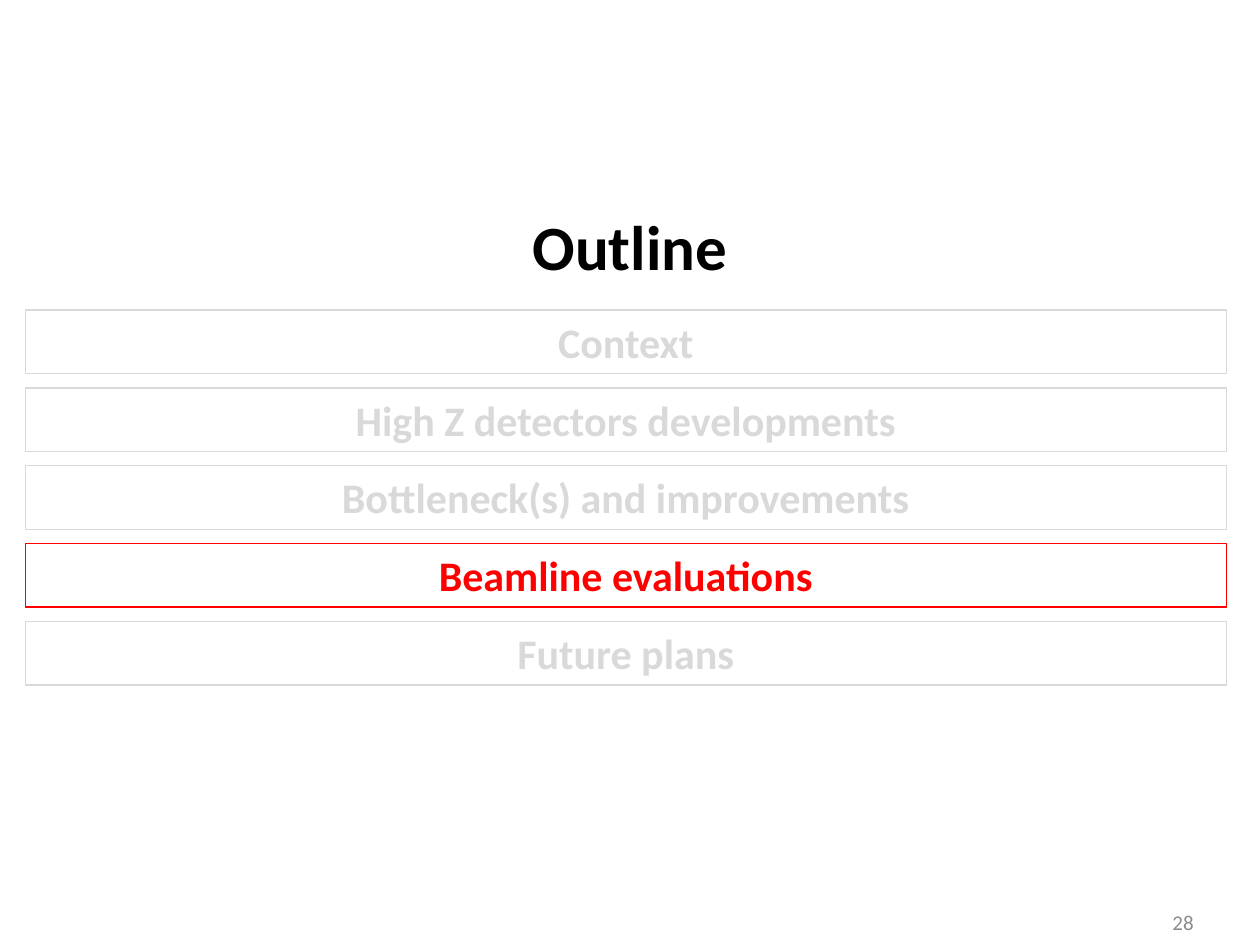
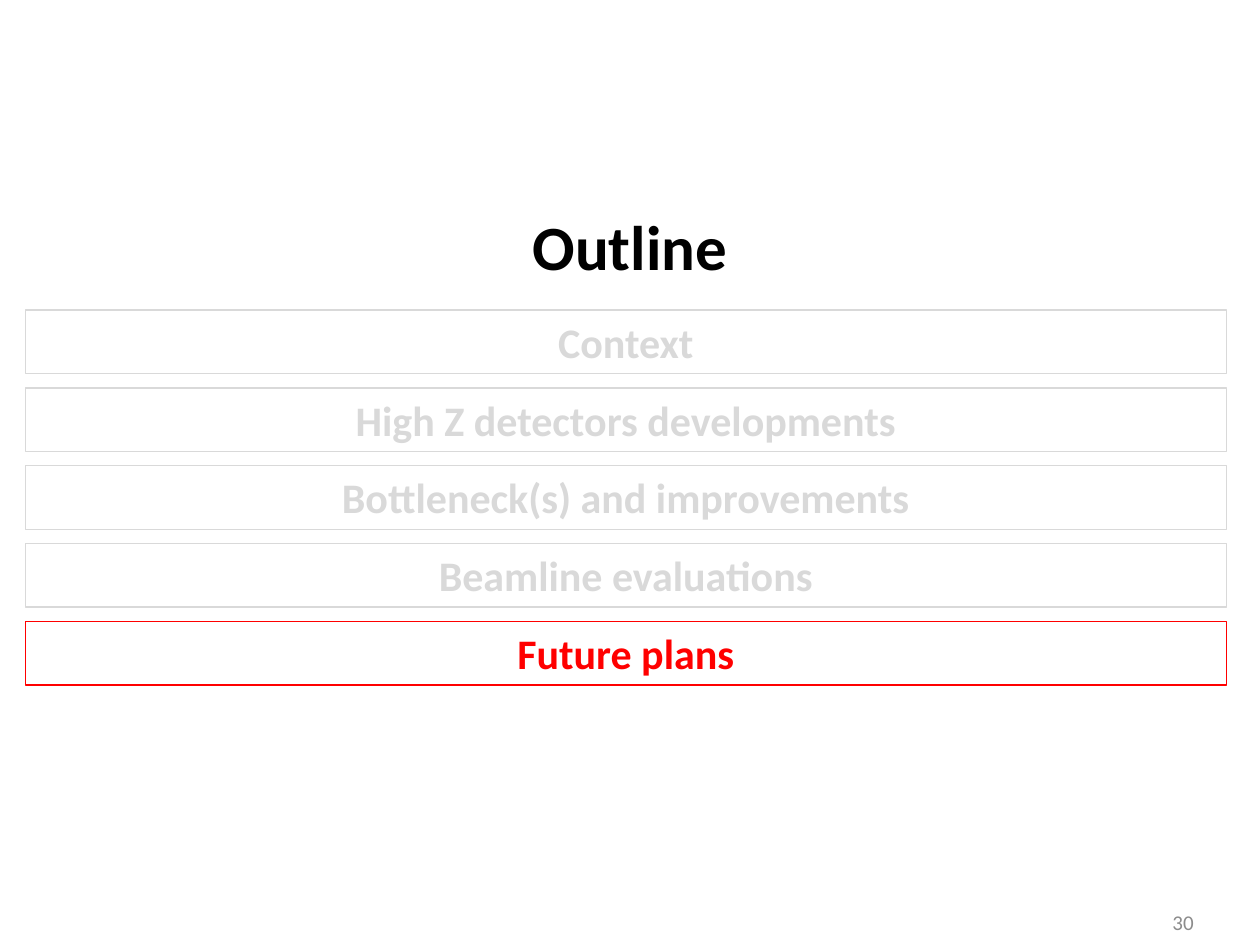
from dataclasses import dataclass

from pptx import Presentation
from pptx.dml.color import RGBColor
from pptx.enum.shapes import MSO_SHAPE
from pptx.enum.text import MSO_ANCHOR, MSO_AUTO_SIZE, PP_ALIGN
from pptx.util import Cm, Pt


@dataclass(frozen=True)
class Theme:
    font: str = "Calibri"
    title_color: str = "000000"
    muted: str = "D9D9D9"
    active: str = "FF0000"
    number_color: str = "8C8C8C"
    title_size: int = 36
    topic_size: int = 24
    number_size: int = 12
    line_width: float = 0.75


TOPICS = [
    "Context",
    "High Z detectors developments",
    "Bottleneck(s) and improvements",
    "Beamline evaluations",
    "Future plans",
]

# Page number and the topic highlighted on that page
PAGES = [(28, "Beamline evaluations"), (30, "Future plans")]

# Topic bars, in cm
BAR_LEFT, BAR_TOP, BAR_WIDTH, BAR_HEIGHT = 0.51, 6.25, 24.21, 1.28
BAR_PITCH = 1.57


class Deck:
    def __init__(self, theme):
        self.theme = theme
        self.prs = Presentation()
        self.prs.slide_width, self.prs.slide_height = Cm(25.4), Cm(19.05)
        self.s = None

    def new_slide(self):
        title_only = self.prs.slide_layouts[5]
        self.s = self.prs.slides.add_slide(title_only)

    def set_text(self, sp, text, size, color, bold=True, **frame):
        """Put one centred paragraph in a shape."""
        tf = sp.text_frame
        frame_format = {
            "word_wrap": True,
            "vertical_anchor": MSO_ANCHOR.MIDDLE,
            "auto_size": MSO_AUTO_SIZE.NONE,
        } | frame
        for name, value in frame_format.items():
            setattr(tf, name, value)
        p = tf.paragraphs[0]
        p.alignment = PP_ALIGN.CENTER
        r = p.add_run()
        r.text = text
        font_format = {"name": self.theme.font, "size": Pt(size), "bold": bold}
        for name, value in font_format.items():
            setattr(r.font, name, value)
        r.font.color.rgb = RGBColor.from_string(color)

    def title(self, text):
        sp = self.s.shapes.title
        place = {"left": 1.9, "top": 3.53, "width": 21.6, "height": 2.82}
        for name, value in place.items():
            setattr(sp, name, Cm(value))
        self.set_text(sp, text, self.theme.title_size, self.theme.title_color)

    def page_number(self, number):
        sp = self.s.shapes.add_textbox(Cm(22.3), Cm(18.14), Cm(3.1), Cm(0.91))
        self.set_text(sp, str(number), self.theme.number_size,
                      self.theme.number_color, bold=False)

    def topic_bar(self, row, text, active):
        color = self.theme.active if active else self.theme.muted
        sp = self.s.shapes.add_shape(
            MSO_SHAPE.RECTANGLE, Cm(BAR_LEFT), Cm(BAR_TOP + row * BAR_PITCH),
            Cm(BAR_WIDTH), Cm(BAR_HEIGHT))
        sp.shadow.inherit = False
        sp.fill.background()
        sp.line.color.rgb = RGBColor.from_string(color)
        sp.line.width = Pt(self.theme.line_width)
        self.set_text(sp, text, self.theme.topic_size, color,
                      vertical_anchor=MSO_ANCHOR.TOP,
                      auto_size=MSO_AUTO_SIZE.SHAPE_TO_FIT_TEXT)


def main():
    deck = Deck(Theme())
    for number, current in PAGES:
        deck.new_slide()
        deck.title("Outline")
        deck.page_number(number)
        for row, topic in enumerate(TOPICS):
            deck.topic_bar(row, topic, topic == current)
    deck.prs.save("out.pptx")


if __name__ == "__main__":
    main()
